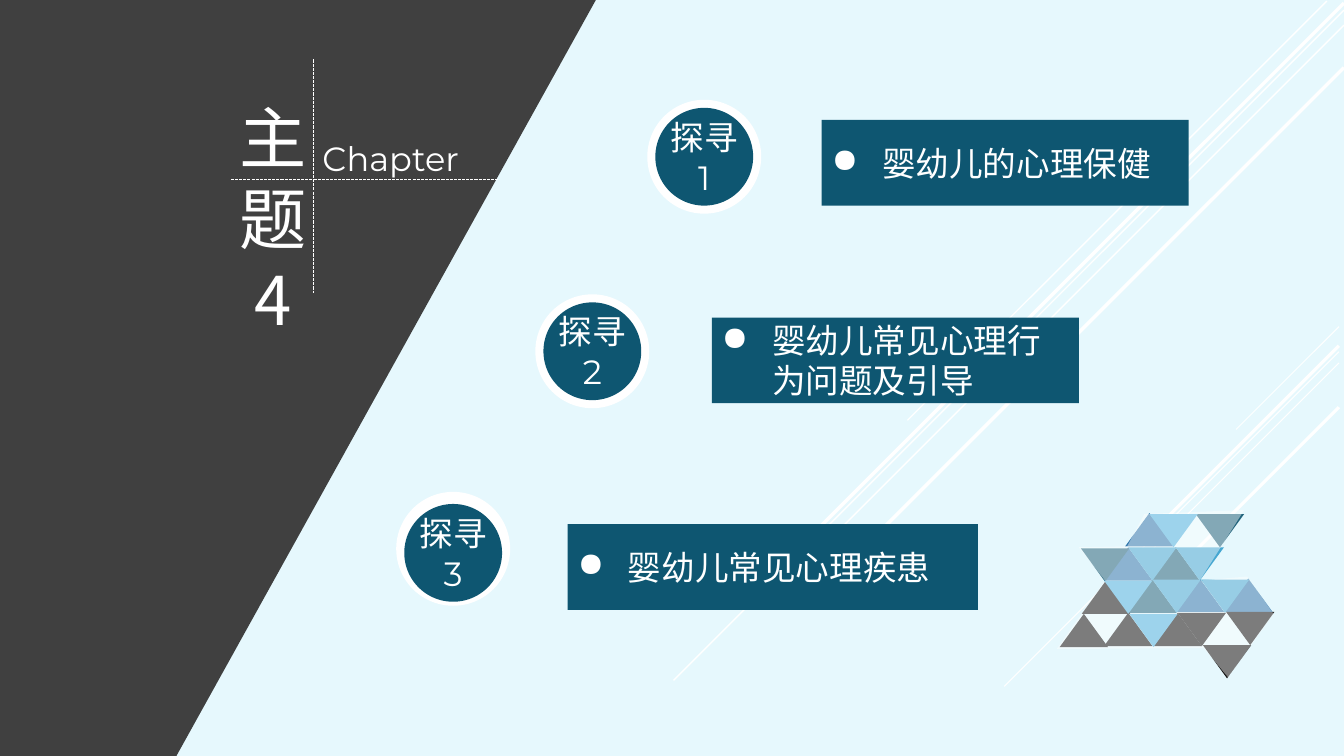
import pptx
import pptx.dml.color
import pptx.enum.dml
import pptx.enum.shapes
import pptx.enum.text
import pptx.oxml.ns
import pptx.oxml.xmlchemy
import pptx.util
from dataclasses import dataclass

Inches = pptx.util.Inches
Pt = pptx.util.Pt
SHAPE = pptx.enum.shapes.MSO_SHAPE
ALIGN = pptx.enum.text.PP_ALIGN
ANCHOR = pptx.enum.text.MSO_ANCHOR
qn = pptx.oxml.ns.qn


@dataclass(frozen=True)
class Theme:
    background: str = "E4F8FD"
    panel: str = "404040"
    white: str = "FFFFFF"
    teal: str = "0E5671"
    blue: str = "1F6BA5"
    sky: str = "40ABDB"
    azure: str = "349FCD"
    black: str = "000000"
    latin: str = "Montserrat"
    cjk: str = "Noto Sans CJK SC"
    topic: str = "Noto Sans CJK JP"
    title_size: int = 48
    body_size: int = 24


THEME = Theme()
RGB = pptx.dml.color.RGBColor.from_string


def add_xml(parent, tag, **attributes):
    element = pptx.oxml.xmlchemy.OxmlElement(tag)
    for name, value in attributes.items():
        element.set(name, str(value))
    parent.append(element)
    return element


def paint(sp, color, alpha=None):
    sp.shadow.inherit = False
    sp.fill.solid()
    sp.fill.fore_color.rgb = RGB(color)
    sp.line.fill.background()
    if alpha is not None:
        fill = sp._element.spPr.find(qn("a:solidFill"))
        add_xml(fill[0], "a:alpha", val=alpha * 1000)
    return sp


def add_polygon(s, points, color, alpha=None):
    points = [(Inches(x), Inches(y)) for x, y in points]
    builder = s.shapes.build_freeform(*points[0])
    builder.add_line_segments(points[1:], close=True)
    return paint(builder.convert_to_shape(), color, alpha)


def add_preset(s, kind, box, color, alpha=None):
    sp = s.shapes.add_shape(kind, *(Inches(v) for v in box))
    return paint(sp, color, alpha)


def add_line(s, start, end, width, dashed=False):
    line = s.shapes.add_connector(
        pptx.enum.shapes.MSO_CONNECTOR.STRAIGHT, *(Inches(v) for v in (*start, *end)))
    line.line.color.rgb = RGB(THEME.white)
    line.line.width = Pt(width)
    if dashed:
        line.line.dash_style = pptx.enum.dml.MSO_LINE.SQUARE_DOT
    add_xml(line._element.spPr, "a:effectLst")


def write(tf, paragraphs, size, font, align, anchor):
    tf.word_wrap = True
    tf.auto_size = pptx.enum.text.MSO_AUTO_SIZE.NONE
    tf.vertical_anchor = anchor
    for i, text in enumerate(paragraphs):
        p = tf.add_paragraph() if i else tf.paragraphs[0]
        p.alignment = align
        r = p.add_run()
        r.text = text
        r.font.size = Pt(size)
        r.font.name = font
        r.font.color.rgb = RGB(THEME.white)
        add_xml(r.font._element, "a:ea", typeface=THEME.cjk if font == THEME.latin else font)


def add_rays(s, left, top, rays):
    for x, y, length, width in rays:
        start = (left + x, top + y)
        add_line(s, start, (start[0] - length, start[1] + length), width)


def add_mosaic(s, left, top):
    half, height = 0.24, 0.33
    upward = [
        (THEME.blue, [(0.88, 0), (0.67, 0.34), (1.86, 0.65), (1.38, 0.65)]),
        (THEME.teal, [(1.14, 0.34), (0.91, 0.66)]),
        (THEME.black, [(1.16, 0.99), (0.45, 0.67), (0.23, 1), (0.67, 0.99)]),
    ]
    downward = [
        (THEME.teal, [(1.58, 0.34), (0.44, 0.68)]),
        (THEME.sky, [(1.12, 0.34), (0.67, 1), (0.92, 1.33)]),
        (THEME.azure, [(1.38, 0.67), (0.91, 0.67), (1.63, 0.99), (1.15, 0.99)]),
        (THEME.black, [(1.88, 1.31), (1.4, 1.32), (1.65, 1.64)]),
    ]
    for groups, rise in ((upward, height), (downward, -height)):
        for color, tips in groups:
            for x, y in tips:
                x, y = left + x, top + y
                add_polygon(s, [(x, y), (x + half, y + rise), (x - half, y + rise)], color)


def add_mosaic_veil(s, left, top):
    outline = [(0.66, 0.33), (0.83, 0.01), (1.82, -0.03), (1.38, 0.67), (1.85, 0.63),
               (2.11, 1), (1.66, 1.63), (1.42, 1.34), (-0.04, 1.35), (0.44, 0.67), (0.18, 0.34)]
    add_polygon(s, [(left + x, top + y) for x, y in outline], THEME.white, 44)


def add_backdrop(s, width, height):
    s.background.fill.solid()
    s.background.fill.fore_color.rgb = RGB(THEME.background)
    add_rays(s, 13.28, 3.24, [(0, 0, 1.02, 0.75), (0, 0.25, 3.32, 0.75), (0, 0.36, 2.11, 0.75),
                              (0, 0.19, 1.94, 2.25), (0, 0.8, 1.42, 2.25)])
    add_mosaic(s, 10.52, 5.09)
    add_rays(s, width, 0, [(-0.17, 0.01, 4.16, 1), (0, 0.1, 6.65, 1), (0, 0.25, 5.42, 1),
                           (0, 0.03, 5.31, 2.5), (0, 0.67, 4.75, 2.5)])
    add_preset(s, SHAPE.RECTANGLE, (0, 0, width, height), THEME.white, 9)
    add_mosaic_veil(s, 10.52, 5.09)


def add_chapter_panel(s, height):
    add_polygon(s, [(0, 0), (5.91, 0), (1.75, height), (0, height)], THEME.panel)
    label = s.shapes.add_textbox(Inches(3.1), Inches(1.32), Inches(1.98), Inches(0.5))
    write(label.text_frame, ["Chapter"], THEME.body_size, THEME.latin, ALIGN.JUSTIFY, ANCHOR.TOP)
    title = s.shapes.title
    title.left, title.top = Inches(1.97), Inches(0.91)
    title.width, title.height = Inches(1.47), Inches(2.5)
    write(title.text_frame, ["主题", "4"], THEME.title_size, THEME.cjk, ALIGN.CENTER, ANCHOR.TOP)
    s.shapes._spTree.append(title._element)
    add_line(s, (2.29, 1.78), (4.95, 1.78), 0.75, dashed=True)
    add_line(s, (3.11, 0.59), (3.11, 2.91), 0.75, dashed=True)


def add_topic(s, left, top, disc_drop, badge, bar, text):
    ring, disc = 1.13, 0.97
    add_preset(s, SHAPE.OVAL, (left, top, ring, ring), THEME.white)
    sp = add_preset(s, SHAPE.OVAL, (left + 0.08, top + disc_drop, disc, disc), THEME.teal)
    tf = sp.text_frame
    tf.margin_left = tf.margin_right = tf.margin_top = tf.margin_bottom = 0
    write(tf, badge, THEME.body_size, THEME.latin, ALIGN.CENTER, ANCHOR.MIDDLE)
    sp = add_preset(s, SHAPE.RECTANGLE, (*bar, 0.85), THEME.teal)
    write(sp.text_frame, [text], THEME.body_size, THEME.topic, ALIGN.LEFT, ANCHOR.MIDDLE)
    pPr = sp.text_frame.paragraphs[0]._p.get_or_add_pPr()
    pPr.set("marL", str(Inches(0.5)))
    pPr.set("indent", str(-Inches(0.5)))
    add_xml(pPr, "a:buChar", char="●")


def main():
    prs = pptx.Presentation()
    width, height = 13.33, 7.5
    prs.slide_width, prs.slide_height = Inches(width), Inches(height)
    s = prs.slides.add_slide(prs.slide_layouts[5])
    add_backdrop(s, width, height)
    add_chapter_panel(s, height)
    topics = [
        (6.42, 0.99, 0.08, ["探寻1"], (8.15, 1.19, 3.64), "婴幼儿的心理保健"),
        (5.31, 2.92, 0.08, ["探寻2"], (7.06, 3.15, 3.64), "婴幼儿常见心理行为问题及引导"),
        (3.93, 4.88, 0.12, ["探寻", "3"], (5.63, 5.2, 4.07), "婴幼儿常见心理疾患"),
    ]
    for topic in topics:
        add_topic(s, *topic)
    prs.save("out.pptx")


if __name__ == "__main__":
    main()
